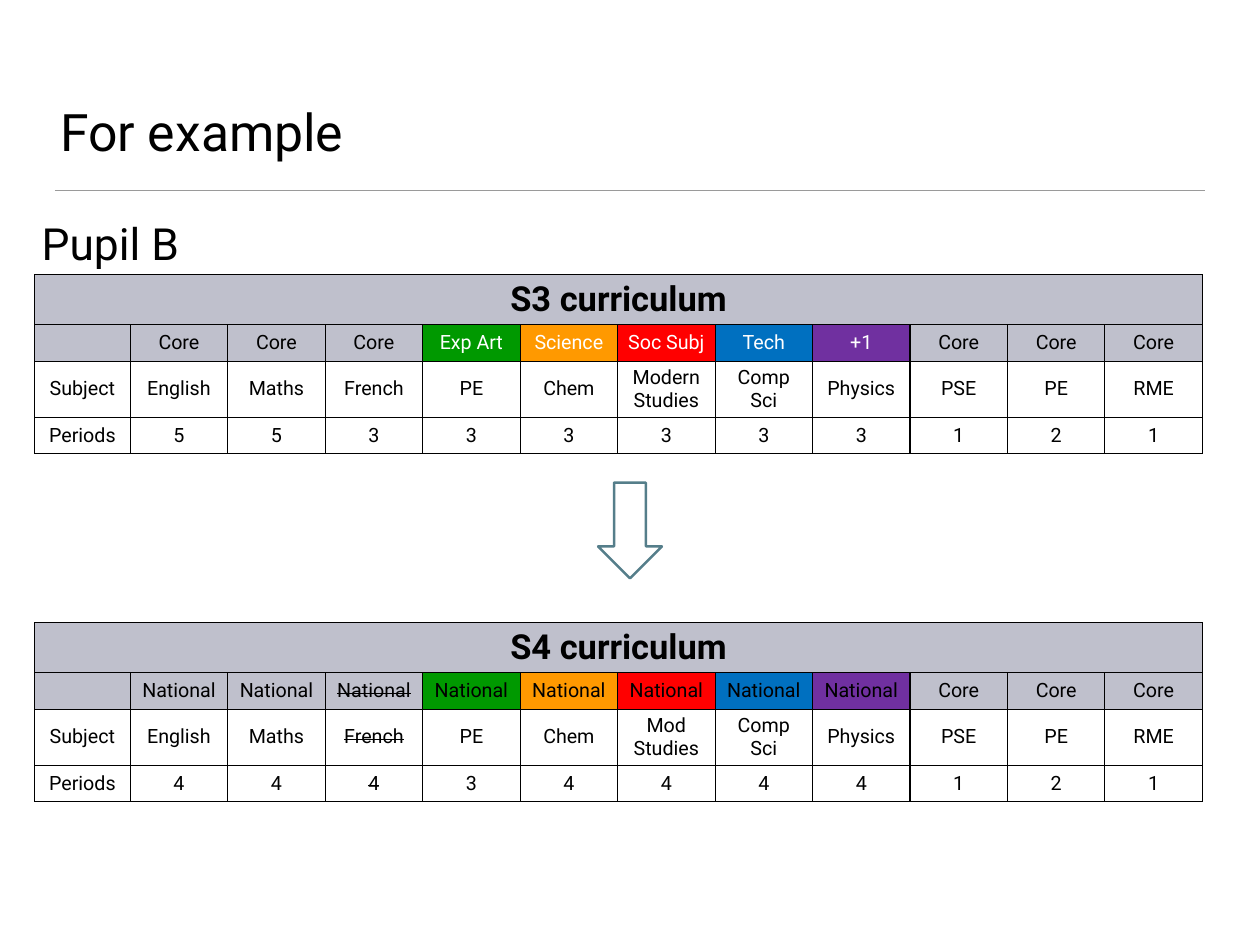
from lxml import etree
from pptx import Presentation
from pptx.dml.color import RGBColor
from pptx.enum.shapes import MSO_CONNECTOR, MSO_SHAPE
from pptx.enum.text import MSO_ANCHOR, PP_ALIGN
from pptx.oxml import parse_xml
from pptx.oxml.ns import qn
from pptx.util import Inches, Pt

STRAIGHT = MSO_CONNECTOR.STRAIGHT
DOWN_ARROW = MSO_SHAPE.DOWN_ARROW
MIDDLE, BOTTOM = MSO_ANCHOR.MIDDLE, MSO_ANCHOR.BOTTOM
LEFT, CENTER = PP_ALIGN.LEFT, PP_ALIGN.CENTER
FONT = "Roboto"
COLORS = {
    "black": "000000", "white": "FFFFFF", "rule": "9A9A9A", "arrow": "557E8A",
    "gray": "BFC0CC", "green": "009900", "orange": "FF9900",
    "red": "FF0000", "blue": "0070C0", "purple": "7030A0",
}
COLUMN_COLORS = ["gray"] * 4 + ["green", "orange", "red", "blue", "purple"] + ["gray"] * 3
COLUMN_WIDTHS = [1.08] + [1.1] * 11
ROW_HEIGHTS = [0.56, 0.41, 0.61, 0.41]
BORDER = (
    '<a:{side} xmlns:a="http://schemas.openxmlformats.org/drawingml/2006/main" w="12700">'
    '<a:solidFill><a:srgbClr val="{color}"/></a:solidFill></a:{side}>'
)

CURRICULA = [
    {
        "title": "S3 curriculum", "top": 3.1, "choice color": "white", "dropped column": None,
        "rows": [
            ["", "Core", "Core", "Core", "Exp Art", "Science", "Soc Subj", "Tech", "+1",
             "Core", "Core", "Core"],
            ["Subject", "English", "Maths", "French", "PE", "Chem", "Modern Studies",
             "Comp Sci", "Physics", "PSE", "PE", "RME"],
            ["Periods", "5", "5", "3", "3", "3", "3", "3", "3", "1", "2", "1"],
        ],
    },
    {
        "title": "S4 curriculum", "top": 7.03, "choice color": "black", "dropped column": 3,
        "rows": [
            [""] + ["National"] * 8 + ["Core"] * 3,
            ["Subject", "English", "Maths", "French", "PE", "Chem", "Mod Studies",
             "Comp Sci", "Physics", "PSE", "PE", "RME"],
            ["Periods", "4", "4", "4", "3", "4", "4", "4", "4", "1", "2", "1"],
        ],
    },
]


def add_text(paragraph, text, size, color="black", bold=False, align=CENTER):
    paragraph.alignment = align
    run = paragraph.add_run()
    run.text = text
    run.font.name = FONT
    run.font.size = Pt(size)
    run.font.bold = bold
    run.font.color.rgb = RGBColor.from_string(COLORS[color])
    return run


def style_cell(cell, fill):
    """Center the cell vertically, draw its four borders and fill it if a colour is given."""
    cell.vertical_anchor = MIDDLE
    properties = cell._tc.get_or_add_tcPr()
    for side in ("lnL", "lnR", "lnT", "lnB"):
        properties.append(parse_xml(BORDER.format(side=side, color=COLORS["black"])))
    if fill:
        cell.fill.solid()
        cell.fill.fore_color.rgb = RGBColor.from_string(COLORS[fill])
    else:
        cell.fill.background()


presentation = Presentation()
presentation.slide_width = Inches(14.22)
presentation.slide_height = Inches(10.67)
slide = presentation.slides.add_slide(presentation.slide_layouts[6])

# Heading
rule = slide.shapes.add_connector(STRAIGHT, Inches(0.62), Inches(2.15), Inches(13.6), Inches(2.15))
rule.line.color.rgb = RGBColor.from_string(COLORS["rule"])
rule.line.width = Pt(1)
etree.SubElement(rule._element.spPr, qn("a:effectLst"))

for text, left, top, width, height, size, anchor, align, wrap in [
    ("For example", 0.62, 0.36, 12.97, 1.53, 42, BOTTOM, LEFT, True),
    ("Pupil B", 0.39, 2.38, 1.71, 0.72, 36, MIDDLE, CENTER, False),
]:
    box = slide.shapes.add_textbox(Inches(left), Inches(top), Inches(width), Inches(height))
    frame = box.text_frame
    frame.word_wrap = wrap
    frame.vertical_anchor = anchor
    frame.margin_left = frame.margin_right = Inches(0.06)
    frame.margin_top = frame.margin_bottom = Inches(0.06)
    add_text(frame.paragraphs[0], text, size, align=align)

# Curriculum tables
for curriculum in CURRICULA:
    table = slide.shapes.add_table(
        len(ROW_HEIGHTS), len(COLUMN_WIDTHS), Inches(0.39), Inches(curriculum["top"]),
        Inches(sum(COLUMN_WIDTHS)), Inches(sum(ROW_HEIGHTS))).table
    table.first_row = False
    table.horz_banding = False
    for column, width in zip(table.columns, COLUMN_WIDTHS):
        column.width = Inches(width)
    for row, height in zip(table.rows, ROW_HEIGHTS):
        row.height = Inches(height)

    for cell in table.rows[0].cells:
        style_cell(cell, "gray")
    title_cell = table.cell(0, 0)
    title_cell.merge(table.cell(0, len(COLUMN_WIDTHS) - 1))
    add_text(title_cell.text_frame.paragraphs[0], curriculum["title"], 28, bold=True)

    for row_index, row_texts in enumerate(curriculum["rows"], start=1):
        for column_index, text in enumerate(row_texts):
            cell = table.cell(row_index, column_index)
            fill = COLUMN_COLORS[column_index] if row_index == 1 else None
            style_cell(cell, fill)
            if not text:
                continue
            color = "black" if fill in (None, "gray") else curriculum["choice color"]
            run = add_text(cell.text_frame.paragraphs[0], text, 16, color)
            if column_index == curriculum["dropped column"]:
                run._r.get_or_add_rPr().set("strike", "sngStrike")

# Arrow from S3 to S4
arrow = slide.shapes.add_shape(DOWN_ARROW, Inches(6.75), Inches(5.45), Inches(0.72), Inches(1.08))
arrow.shadow.inherit = False
arrow.fill.solid()
arrow.fill.fore_color.rgb = RGBColor.from_string(COLORS["white"])
arrow.line.color.rgb = RGBColor.from_string(COLORS["arrow"])
arrow.line.width = Pt(2)

presentation.save("out.pptx")
